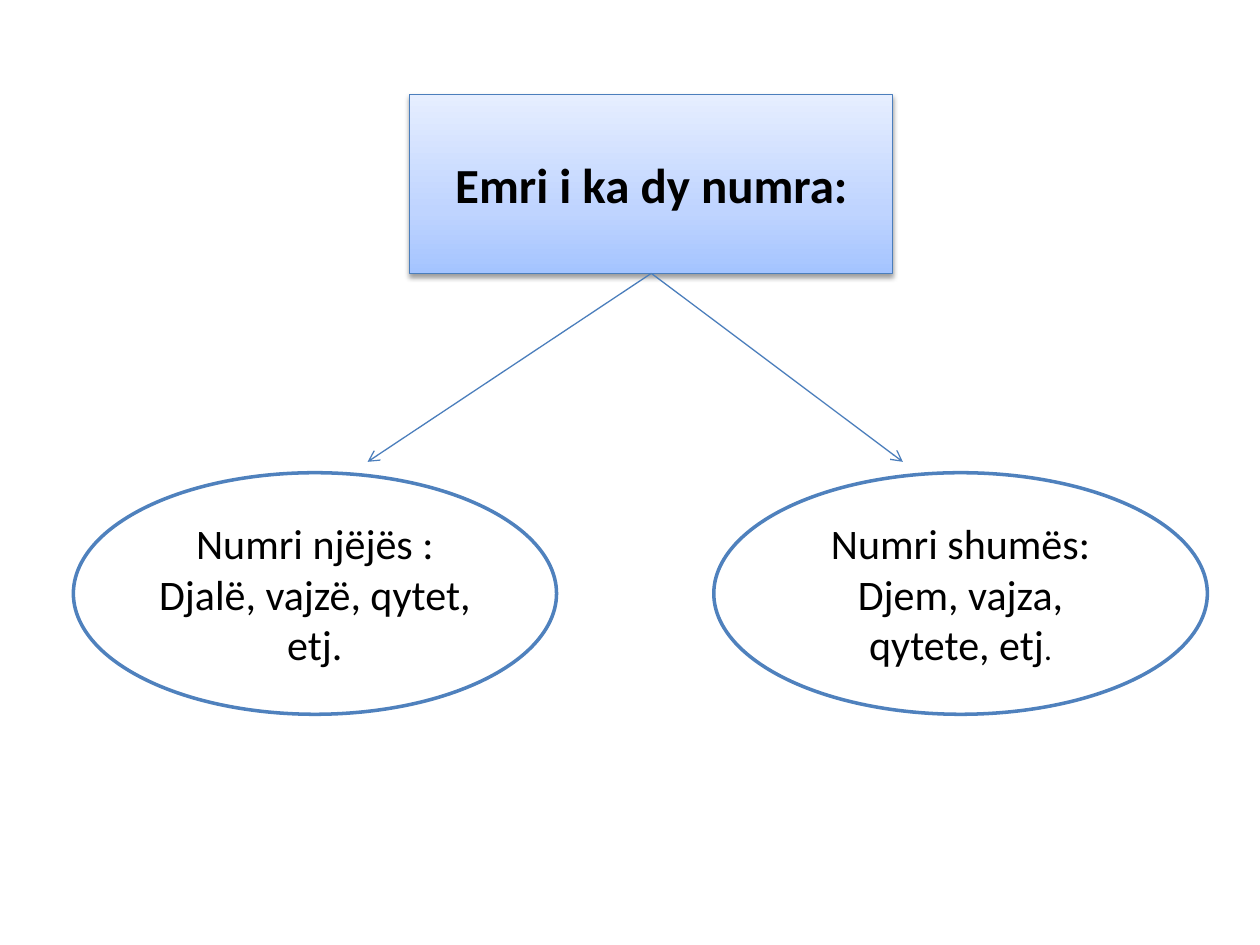
from copy import deepcopy
from dataclasses import dataclass

from lxml.etree import SubElement
from pptx import Presentation
from pptx.dml.color import RGBColor
from pptx.enum.shapes import MSO_CONNECTOR, MSO_SHAPE
from pptx.enum.text import MSO_ANCHOR, PP_ALIGN
from pptx.oxml.ns import qn
from pptx.util import Cm, Pt

BLACK = RGBColor(0x00, 0x00, 0x00)
WHITE = RGBColor(0xFF, 0xFF, 0xFF)
BLUE = RGBColor(0x4F, 0x81, 0xBD)
EDGE = RGBColor(0x4B, 0x7E, 0xBC)
SHADES = [
    (0, RGBColor(0xA4, 0xC4, 0xFF)),
    (0.35, RGBColor(0xBF, 0xD4, 0xFF)),
    (1, RGBColor(0xE6, 0xEE, 0xFF)),
]


@dataclass
class Branch:
    left: float
    width: float
    tip: float  # where the arrow ends, from the left
    lines: list[str]


BRANCHES = [
    Branch(1.48, 9.74, 7.41, ["Numri njëjës :", "Djalë, vajzë, qytet, etj."]),
    Branch(14.39, 9.95, 18.2, ["Numri shumës:", "Djem, vajza, qytete, etj"]),
]
OVAL_TOP, OVAL_HIGH, TIP_TOP = 9.53, 4.87, 9.31


def add_text(para, text: str, size: float = 24, bold: bool = False) -> None:
    para.alignment = PP_ALIGN.CENTER
    run = para.add_run()
    run.text = text
    font = run.font
    font.name, font.size, font.bold = "Calibri", Pt(size), bold
    font.color.rgb = BLACK


def add_node(slide, kind: MSO_SHAPE, left: float, top: float,
             width: float, height: float, edge: RGBColor, weight: float):
    node = slide.shapes.add_shape(kind, Cm(left), Cm(top), Cm(width), Cm(height))
    node.shadow.inherit = False
    node.line.color.rgb = edge
    node.line.width = Pt(weight)
    node.text_frame.word_wrap = True
    node.text_frame.vertical_anchor = MSO_ANCHOR.MIDDLE
    return node


def shade(node) -> None:
    """Give the node a three-stop gradient and a soft shadow below."""
    node.fill.gradient()
    node.fill.gradient_angle = 90
    stops = node.element.spPr.find(qn("a:gradFill")).find(qn("a:gsLst"))
    stops.append(deepcopy(stops[0]))
    for stop, (place, color) in zip(node.fill.gradient_stops, SHADES):
        stop.position = place
        stop.color.rgb = color

    effects = node.element.spPr.find(qn("a:effectLst"))
    cast = SubElement(effects, qn("a:outerShdw"), blurRad=str(Pt(3.1)),
                      dist=str(Pt(1.6)), dir="5400000", rotWithShape="0")
    color = SubElement(cast, qn("a:srgbClr"), val=str(BLACK))
    SubElement(color, qn("a:alpha"), val="38000")


def add_arrow(slide, start, tip: float) -> None:
    arrow = slide.shapes.add_connector(
        MSO_CONNECTOR.STRAIGHT, 0, 0, Cm(tip), Cm(TIP_TOP))
    arrow.begin_connect(start, 2)
    arrow.line.color.rgb = EDGE
    arrow.line.width = Pt(0.75)
    SubElement(arrow.line._get_or_add_ln(), qn("a:tailEnd"), type="arrow")
    SubElement(arrow.element.spPr, qn("a:effectLst"))


def main() -> None:
    deck = Presentation()
    deck.slide_width, deck.slide_height = Cm(25.4), Cm(19.05)
    slide = deck.slides.add_slide(deck.slide_layouts[6])

    # Root box
    root = add_node(slide, MSO_SHAPE.RECTANGLE, 8.26, 1.91, 9.74, 3.6, EDGE, 0.75)
    shade(root)
    add_text(root.text_frame.paragraphs[0], "Emri i ka dy numra:", size=28, bold=True)

    # Ovals
    for branch in BRANCHES:
        oval = add_node(slide, MSO_SHAPE.OVAL, branch.left, OVAL_TOP,
                        branch.width, OVAL_HIGH, BLUE, 2)
        oval.fill.solid()
        oval.fill.fore_color.rgb = WHITE
        frame = oval.text_frame
        add_text(frame.paragraphs[0], branch.lines[0])
        for line in branch.lines[1:]:
            add_text(frame.add_paragraph(), line)
    # The last full stop is smaller
    add_text(frame.paragraphs[-1], ".", size=18)

    # Arrows
    for branch in BRANCHES:
        add_arrow(slide, root, branch.tip)

    deck.save("out.pptx")


if __name__ == "__main__":
    main()
